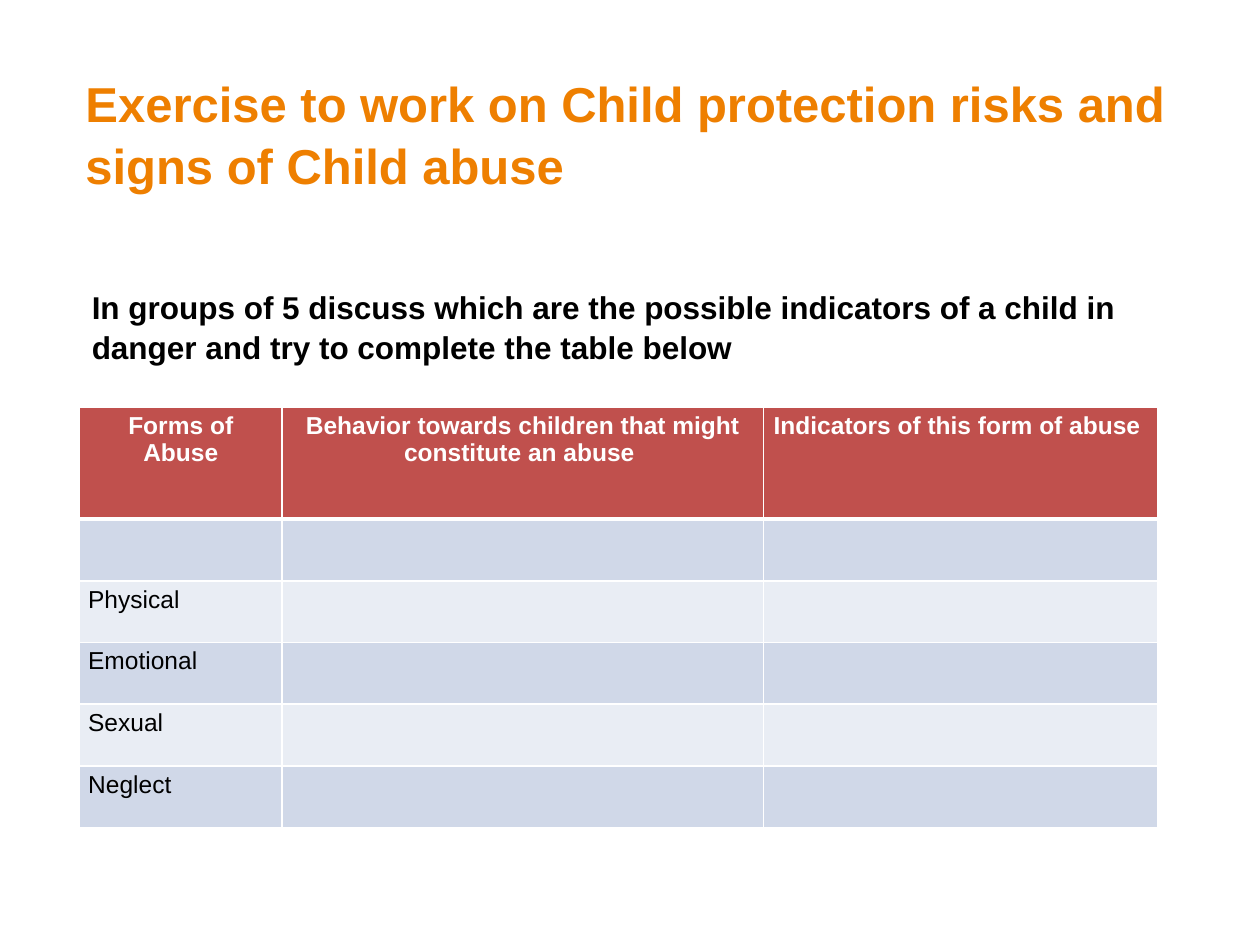
from lxml import etree
from pptx import Presentation
from pptx.dml.color import RGBColor
from pptx.enum.text import PP_ALIGN
from pptx.oxml.ns import qn
from pptx.util import Inches, Pt

CENTER, LEFT = PP_ALIGN.CENTER, PP_ALIGN.LEFT
ORANGE = RGBColor(0xEE, 0x7F, 0x00)
BLACK = RGBColor(0x00, 0x00, 0x00)
WHITE = RGBColor(0xFF, 0xFF, 0xFF)
RED = RGBColor(0xC0, 0x50, 0x4D)
BANDS = (RGBColor(0xD0, 0xD8, 0xE8), RGBColor(0xE9, 0xED, 0xF4))
FONT = "Arial"
MARGIN, CONTENT_WIDTH = 0.63, 8.55
COLUMN_WIDTHS = (1.61, 3.82, 3.13)
HEADER_HEIGHT, ROW_HEIGHT = 0.89, 0.49
HEADERS = (
    "Forms of Abuse",
    "Behavior towards children that might constitute an abuse ",
    "Indicators of this form of abuse ",
)
FORMS = ("", "Physical", "Emotional", "Sexual", "Neglect")


def add_run(paragraph, text, size, color, bold):
    """Add one formatted run to a paragraph."""
    run = paragraph.add_run()
    run.text = text
    run.font.name = FONT
    run.font.size = Pt(size)
    run.font.bold = bold
    run.font.color.rgb = color


def add_text(slide, text, box, size, color):
    """Add a wrapped bold text box, its box given in inches."""
    shape = slide.shapes.add_textbox(*map(Inches, box))
    shape.text_frame.word_wrap = True
    paragraph = shape.text_frame.paragraphs[0]
    paragraph.line_spacing = 1.05
    add_run(paragraph, text, size, color, True)


def set_borders(cell, top, bottom):
    """Draw white cell borders, with the top and bottom widths in points."""
    properties = cell._tc.get_or_add_tcPr()
    for side, width in (("L", 1), ("R", 1), ("T", top), ("B", bottom)):
        line = etree.SubElement(properties, qn(f"a:ln{side}"), w=str(Pt(width)))
        fill = etree.SubElement(line, qn("a:solidFill"))
        etree.SubElement(fill, qn("a:srgbClr"), val=str(WHITE))


def format_cell(cell, text, row):
    """Style a cell as header or banded body and write its text."""
    header = row == 0
    cell.margin_left = cell.margin_right = Inches(0.07)
    cell.margin_top = cell.margin_bottom = Inches(0.04)
    set_borders(cell, 3 if row == 1 else 1, 3 if header else 1)
    cell.fill.solid()
    cell.fill.fore_color.rgb = RED if header else BANDS[(row - 1) % 2]
    if text:
        paragraph = cell.text_frame.paragraphs[0]
        paragraph.alignment = CENTER if header else LEFT
        add_run(paragraph, text, 14, WHITE if header else BLACK, header)


def add_abuse_table(slide):
    """Add the table to be completed by the groups."""
    rows = [HEADERS] + [(form, "", "") for form in FORMS]
    heights = [HEADER_HEIGHT] + [ROW_HEIGHT] * len(FORMS)
    box = (MARGIN, 3.23, sum(COLUMN_WIDTHS), sum(heights))
    frame = slide.shapes.add_table(
        len(rows), len(HEADERS), *map(Inches, box)
    )
    table = frame.table
    for column, width in zip(table.columns, COLUMN_WIDTHS):
        column.width = Inches(width)
    for index, (texts, height) in enumerate(zip(rows, heights)):
        table.rows[index].height = Inches(height)
        for cell, text in zip(table.rows[index].cells, texts):
            format_cell(cell, text, index)


def main():
    """Build and save the exercise slide."""
    presentation = Presentation()
    presentation.slide_width = Inches(10)
    presentation.slide_height = Inches(7.5)
    slide = presentation.slides.add_slide(presentation.slide_layouts[6])
    add_abuse_table(slide)
    add_text(
        slide,
        "In groups of 5 discuss which are the possible indicators of a child "
        "in danger and try to complete the table below",
        (MARGIN, 2.22, CONTENT_WIDTH, 0.89), 18, BLACK,
    )
    add_text(
        slide,
        "Exercise to work on Child protection risks and signs of Child abuse",
        (0.58, 0.51, 9.42, 1.1), 28, ORANGE,
    )
    presentation.save("out.pptx")


if __name__ == "__main__":
    main()
